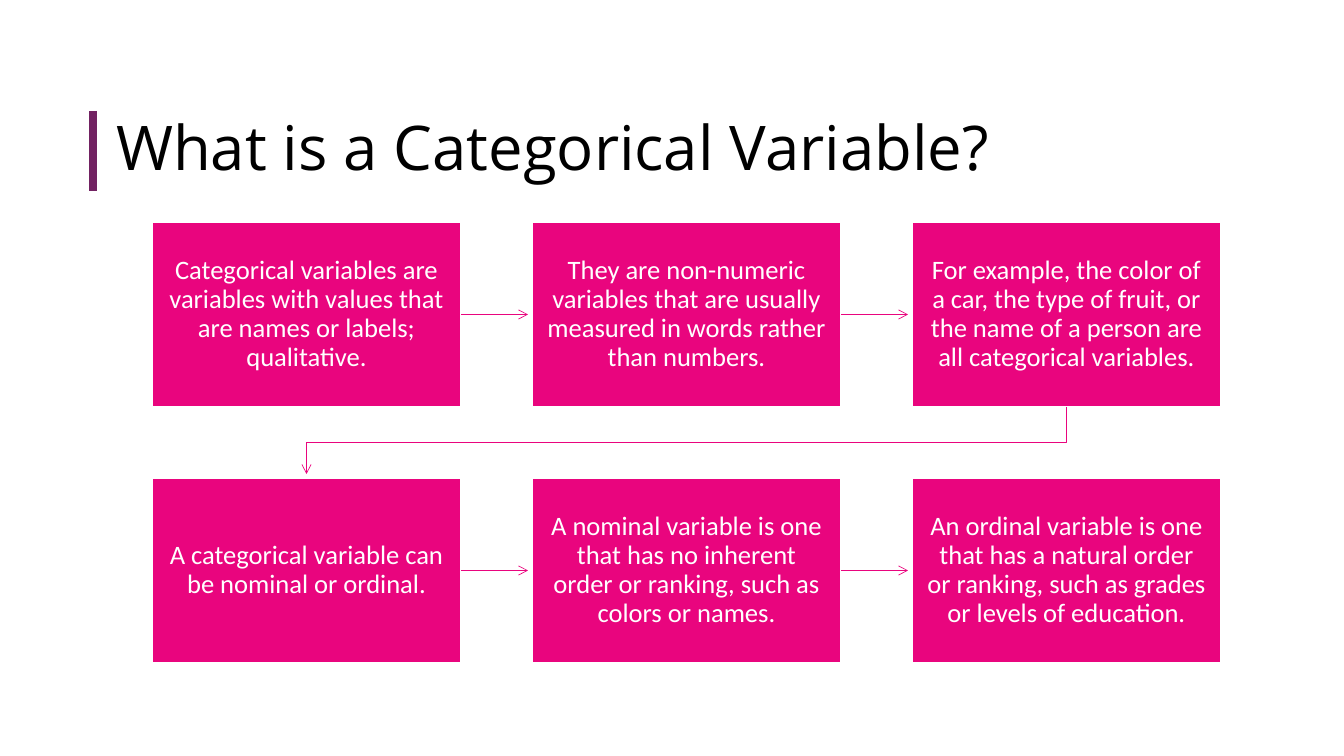
from dataclasses import dataclass

from lxml.etree import SubElement
from pptx import Presentation
from pptx.dml.color import RGBColor
from pptx.enum.shapes import MSO_CONNECTOR, MSO_SHAPE
from pptx.enum.text import MSO_ANCHOR, MSO_AUTO_SIZE, PP_ALIGN
from pptx.oxml.ns import qn
from pptx.util import Pt

EMU_PER_PX = 914400 / 100.8
TITLE_ONLY = 5


@dataclass(frozen=True)
class Theme:
    pink: RGBColor = RGBColor(0xE9, 0x05, 0x7E)
    purple: RGBColor = RGBColor(0x72, 0x22, 0x62)
    white: RGBColor = RGBColor(0xFF, 0xFF, 0xFF)
    black: RGBColor = RGBColor(0x00, 0x00, 0x00)
    title_font: str = "Open Sans"
    body_font: str = "Calibri"
    title_size: int = 44
    body_size: int = 19
    bar_width: float = 6
    border_width: float = 1.5
    arrow_width: float = 0.5


THEME = Theme()

STEPS = [
    "Categorical variables are variables with values that are names or labels; qualitative.",
    "They are non-numeric variables that are usually measured in words rather than numbers.",
    "For example, the color of a car, the type of fruit, or the name of a person are "
    "all categorical variables.",
    "A categorical variable can be nominal or ordinal.",
    "A nominal variable is one that has no inherent order or ranking, such as colors or names.",
    "An ordinal variable is one that has a natural order or ranking, such as grades or "
    "levels of education.",
]
COLUMNS = 3
GRID_LEFT, GRID_TOP = 152, 222
BOX_WIDTH, BOX_HEIGHT = 309, 185
COLUMN_STEP, ROW_STEP = 380, 256
ARROW_LENGTH = 67


def px(length):
    return round(length * EMU_PER_PX)


def write_text(shape, text, *, font, size, color, align, margins=None):
    """Fill a shape with one paragraph; margins are (horizontal, vertical) px."""
    frame = shape.text_frame
    frame.word_wrap = True
    frame.auto_size = MSO_AUTO_SIZE.NONE
    frame.vertical_anchor = MSO_ANCHOR.MIDDLE
    if margins:
        frame.margin_left = frame.margin_right = px(margins[0])
        frame.margin_top = frame.margin_bottom = px(margins[1])
    frame.text = text
    paragraph = frame.paragraphs[0]
    paragraph.alignment = align
    paragraph.line_spacing = 0.9
    paragraph.font.name = font
    paragraph.font.size = Pt(size)
    paragraph.font.color.rgb = color


def style_line(shape, color, width):
    shape.line.color.rgb = color
    shape.line.width = Pt(width)


def add_arrowhead(shape):
    outline = shape._element.spPr.find(qn("a:ln"))
    SubElement(outline, qn("a:tailEnd"), type="arrow")


def add_line(slide, start, end, color, width, arrow=False):
    points = [px(value) for value in (*start, *end)]
    connector = slide.shapes.add_connector(MSO_CONNECTOR.STRAIGHT, *points)
    style_line(connector, color, width)
    if arrow:
        add_arrowhead(connector)
    SubElement(connector._element.spPr, qn("a:effectLst"))


def add_bent_arrow(slide, points):
    start, *others = [(px(x), px(y)) for x, y in points]
    builder = slide.shapes.build_freeform(*start)
    builder.add_line_segments(others, close=False)
    shape = builder.convert_to_shape()
    shape.shadow.inherit = False
    shape.fill.background()
    style_line(shape, THEME.pink, THEME.arrow_width)
    add_arrowhead(shape)


def add_step_box(slide, left, top, text):
    box = slide.shapes.add_shape(
        MSO_SHAPE.RECTANGLE, px(left), px(top), px(BOX_WIDTH), px(BOX_HEIGHT))
    box.shadow.inherit = False
    box.fill.solid()
    box.fill.fore_color.rgb = THEME.pink
    style_line(box, THEME.white, THEME.border_width)
    write_text(box, text, font=THEME.body_font, size=THEME.body_size,
               color=THEME.white, align=PP_ALIGN.CENTER, margins=(15, 16))


def add_title(slide, text):
    add_line(slide, (93, 111), (93, 191), THEME.purple, THEME.bar_width)
    title = slide.shapes.title
    title.left, title.top, title.width, title.height = map(px, (106, 111, 1159, 80))
    write_text(title, text, font=THEME.title_font, size=THEME.title_size,
               color=THEME.black, align=PP_ALIGN.LEFT)


def add_steps(slide):
    for index, text in enumerate(STEPS):
        row, column = divmod(index, COLUMNS)
        left = GRID_LEFT + column * COLUMN_STEP
        top = GRID_TOP + row * ROW_STEP
        right, bottom = left + BOX_WIDTH, top + BOX_HEIGHT
        add_step_box(slide, left, top, text)
        if column < COLUMNS - 1:
            middle = top + BOX_HEIGHT / 2
            add_line(slide, (right, middle), (right + ARROW_LENGTH, middle),
                     THEME.pink, THEME.arrow_width, arrow=True)
        elif index < len(STEPS) - 1:
            from_x = left + BOX_WIDTH / 2
            to_x = GRID_LEFT + BOX_WIDTH / 2
            turn_y = (bottom + top + ROW_STEP) / 2
            add_bent_arrow(slide, [(from_x, bottom), (from_x, turn_y),
                                   (to_x, turn_y), (to_x, bottom + ARROW_LENGTH)])


def main():
    presentation = Presentation()
    presentation.slide_width = px(1344)
    presentation.slide_height = px(756)
    slide = presentation.slides.add_slide(presentation.slide_layouts[TITLE_ONLY])
    add_title(slide, "What is a Categorical Variable?")
    add_steps(slide)
    presentation.save("out.pptx")


if __name__ == "__main__":
    main()
